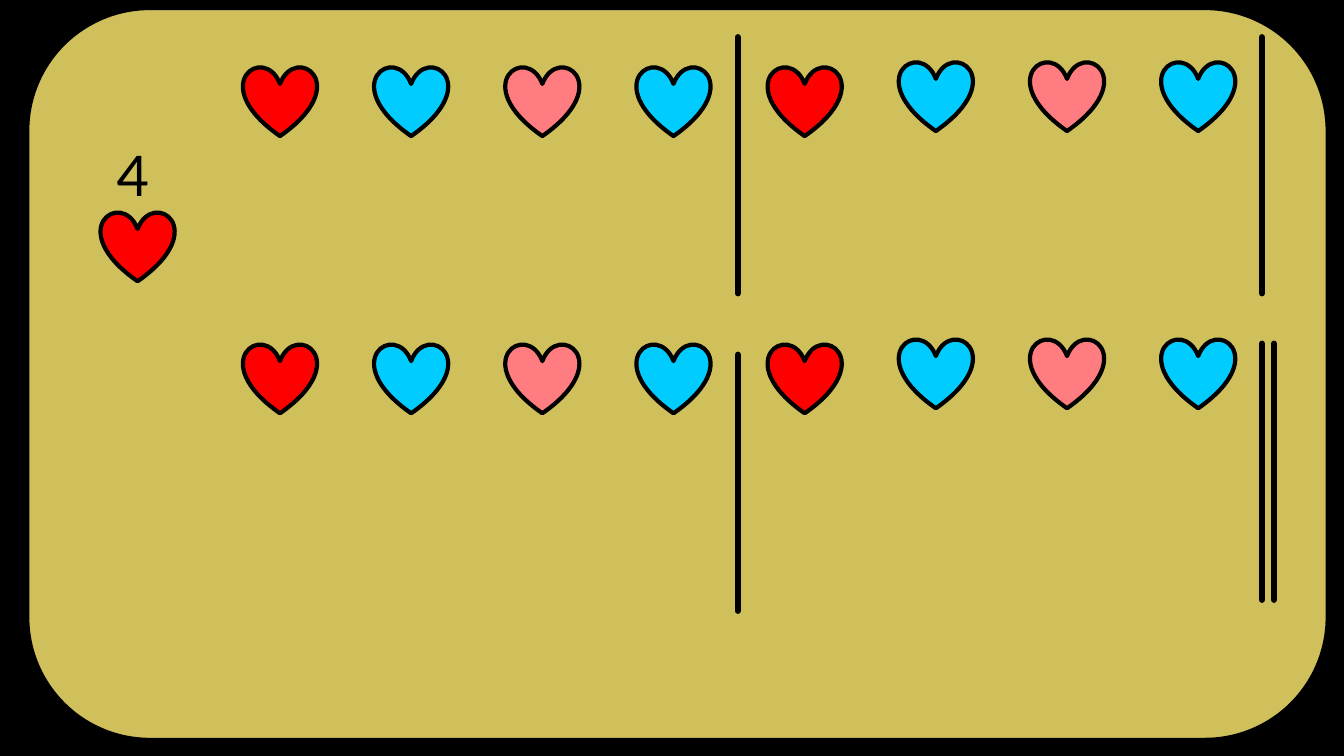
from pptx import Presentation
from pptx.dml.color import RGBColor
from pptx.enum.shapes import MSO_CONNECTOR, MSO_SHAPE
from pptx.enum.text import MSO_AUTO_SIZE
from pptx.oxml.ns import qn
from pptx.util import Pt
from lxml.etree import SubElement

THEME = {
    "background": "000000",
    "ink": "000000",
    "card": "D0C05B",
    "strong": "FF0000",
    "weak": "00CCFF",
    "medium": "FF7C80",
    "font": "Lato",
    "meter_size": 40,
    "card_line": 1.5,
    "heart_line": 3,
    "bar_line": 4.5,
}

METER = "4"
BAR_PATTERN = ["strong", "weak", "medium", "weak"]
BARS_PER_ROW = 2
ROW_TOPS = [47.5, 245.5]
BAR_LINES = [(527, 26.6), (901.4, 26.6), (527, 253.4), (901.4, 245.5), (910, 245.5)]

CARD_BOX = (20.2, 6.5, 927.4, 521.3)
METER_BOX = (76.3, 96.5, 48.2, 56.2)
METER_HEART = (72, 151.2)
HEART_SIZE = (52.6, 49.7)
FIRST_BEAT_LEFT = 173.7
BEAT_STEP = 93.7
FIRST_RAISED_BEAT = 5
RAISE = 3.6
BAR_LINE_LENGTH = 182.9


def color(name):
    return RGBColor.from_string(THEME[name])


def add_outlined_shape(slide, kind, box, fill, line_width):
    shape = slide.shapes.add_shape(kind, *map(Pt, box))
    shape.shadow.inherit = False
    shape.fill.solid()
    shape.fill.fore_color.rgb = color(fill)
    shape.line.color.rgb = color("ink")
    shape.line.width = Pt(THEME[line_width])


def add_heart(slide, left, top, fill):
    add_outlined_shape(slide, MSO_SHAPE.HEART, (left, top, *HEART_SIZE), fill, "heart_line")


def add_meter(slide):
    text_frame = slide.shapes.add_textbox(*map(Pt, METER_BOX)).text_frame
    frame_format = {"word_wrap": True, "auto_size": MSO_AUTO_SIZE.SHAPE_TO_FIT_TEXT}
    for name, value in frame_format.items():
        setattr(text_frame, name, value)
    run = text_frame.paragraphs[0].add_run()
    run.text = METER
    run.font.color.rgb = color("ink")
    font_format = {"name": THEME["font"], "size": Pt(THEME["meter_size"])}
    for name, value in font_format.items():
        setattr(run.font, name, value)


def add_bar_line(slide, left, top):
    connector = slide.shapes.add_connector(
        MSO_CONNECTOR.STRAIGHT, Pt(left), Pt(top), Pt(left), Pt(top + BAR_LINE_LENGTH)
    )
    connector.line.color.rgb = color("ink")
    connector.line.width = Pt(THEME["bar_line"])
    properties = connector._element.spPr
    properties.find(qn("a:ln")).set("cap", "rnd")
    SubElement(properties, qn("a:effectLst"))


def main():
    presentation = Presentation()
    presentation.slide_width = Pt(960)
    presentation.slide_height = Pt(540)
    slide = presentation.slides.add_slide(presentation.slide_layouts[6])
    slide.background.fill.solid()
    slide.background.fill.fore_color.rgb = color("background")

    add_outlined_shape(slide, MSO_SHAPE.ROUNDED_RECTANGLE, CARD_BOX, "card", "card_line")
    add_meter(slide)
    add_heart(slide, *METER_HEART, "strong")
    for row_top in ROW_TOPS:
        for beat, fill in enumerate(BAR_PATTERN * BARS_PER_ROW):
            top = row_top - RAISE if beat >= FIRST_RAISED_BEAT else row_top
            add_heart(slide, FIRST_BEAT_LEFT + beat * BEAT_STEP, top, fill)
    for left, top in BAR_LINES:
        add_bar_line(slide, left, top)

    presentation.save("out.pptx")


if __name__ == "__main__":
    main()
